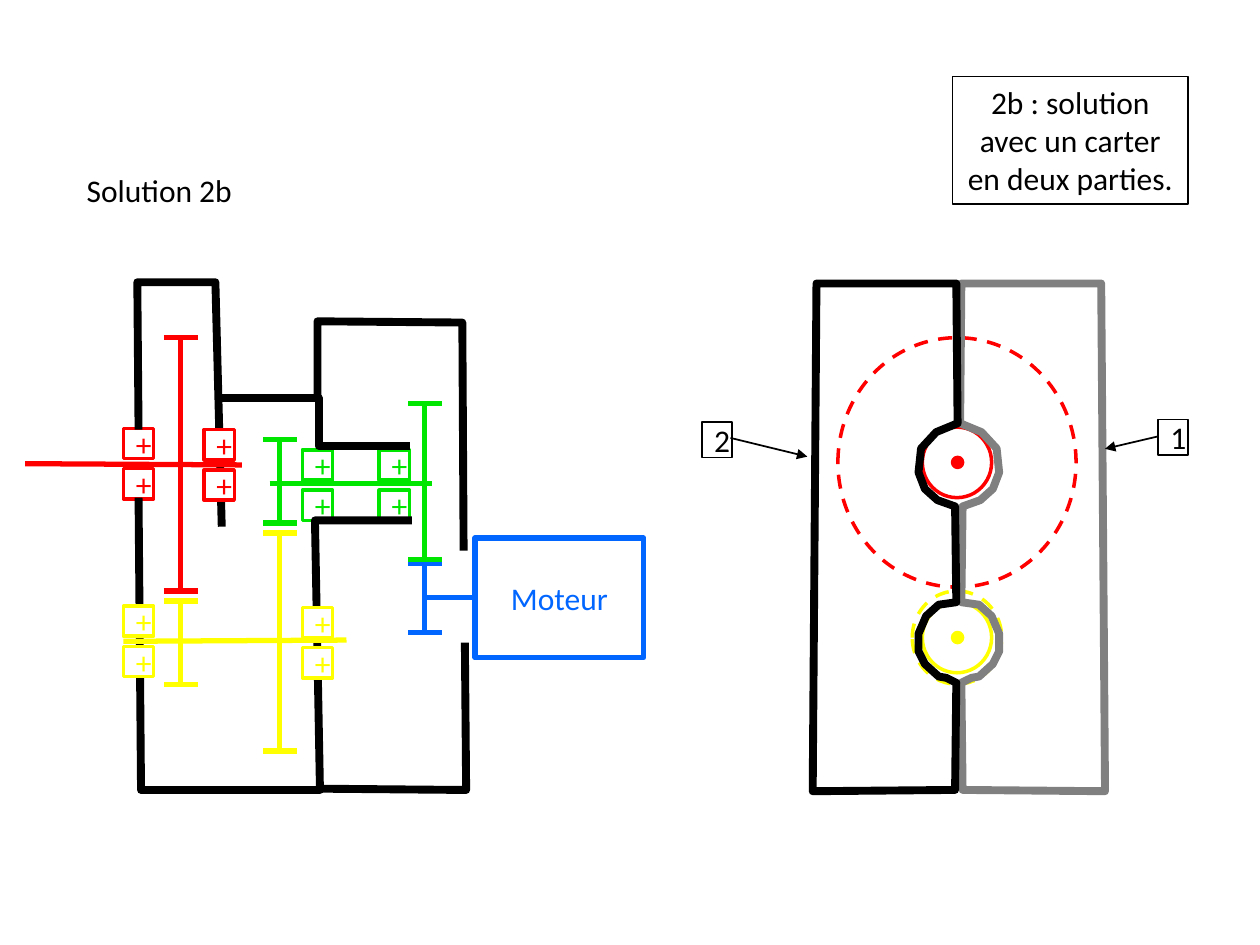
from pptx import Presentation
from pptx.dml.color import RGBColor
from pptx.enum.dml import MSO_LINE
from pptx.enum.shapes import MSO_CONNECTOR, MSO_SHAPE
from pptx.enum.text import MSO_ANCHOR, MSO_AUTO_SIZE, PP_ALIGN
from pptx.oxml.ns import qn
from pptx.util import Pt
from lxml.etree import SubElement

PX = 9144  # EMU per px, 100 px to the inch

BLACK = RGBColor(0x00, 0x00, 0x00)
WHITE = RGBColor(0xFF, 0xFF, 0xFF)
GRAY = RGBColor(0x80, 0x80, 0x80)
RED = RGBColor(0xFF, 0x00, 0x00)
GREEN = RGBColor(0x00, 0xE6, 0x00)
BLUE = RGBColor(0x00, 0x66, 0xFF)
YELLOW = RGBColor(0xFF, 0xFF, 0x00)


class Diagram:
    font = {"name": "Calibri", "size": Pt(18)}
    gear_width, casing_width, bearing_width = 3, 4.5, 2
    bearing_size, bearing_pitch = 24, 32
    section_x = 760

    def __init__(self, slide):
        self.shapes = slide.shapes

    def text(self, sp, text, color, align=PP_ALIGN.CENTER, **frame):
        tf = sp.text_frame
        for name, value in frame.items():
            setattr(tf, name, value)
        p = tf.paragraphs[0]
        p.alignment = align
        r = p.add_run()
        r.text = text
        for name, value in self.font.items():
            setattr(r.font, name, value)
        r.font.color.rgb = color

    def outline(self, sp, color, width, fill=None, dash=None):
        sp.shadow.inherit = False
        if fill is None:
            sp.fill.background()
        else:
            sp.fill.solid()
            sp.fill.fore_color.rgb = fill
        sp.line.color.rgb = color
        sp.line.width = Pt(width)
        if dash:
            sp.line.dash_style = dash

    def shape(self, kind, x, y, w, h, color, width, fill=None, dash=None):
        sp = self.shapes.add_shape(kind, x * PX, y * PX, w * PX, h * PX)
        self.outline(sp, color, width, fill, dash)
        return sp

    def box(self, x, y, w, h, text, color, width, fill=None, **frame):
        sp = self.shape(MSO_SHAPE.RECTANGLE, x, y, w, h, color, width, fill)
        self.text(sp, text, color, **frame)

    def label(self, x, y, w, h, text):
        sp = self.shapes.add_textbox(x * PX, y * PX, w * PX, h * PX)
        self.text(sp, text, BLACK, PP_ALIGN.LEFT, word_wrap=False,
                  auto_size=MSO_AUTO_SIZE.SHAPE_TO_FIT_TEXT)

    def callout(self, x, y, text, adjustments):
        sp = self.shape(MSO_SHAPE.LINE_CALLOUT_1, x, y, 24, 28, BLACK, 1, WHITE)
        for i, value in enumerate(adjustments):
            sp.adjustments[i] = value
        SubElement(sp.line._get_or_add_ln(), qn("a:tailEnd"), type="triangle")
        self.text(sp, text, BLACK, vertical_anchor=MSO_ANCHOR.MIDDLE)

    def line(self, x1, y1, x2, y2, color):
        cx = self.shapes.add_connector(
            MSO_CONNECTOR.STRAIGHT, x1 * PX, y1 * PX, x2 * PX, y2 * PX)
        cx.line.color.rgb = color
        cx.line.width = Pt(self.gear_width)
        SubElement(cx._element.spPr, qn("a:effectLst"))

    def gear(self, x, top, bottom, color):
        self.line(x, top, x, bottom, color)
        for y in (top, bottom):
            self.line(x - 13, y, x + 14, y, color)

    def bearing(self, x, y, color):
        for top in (y, y + self.bearing_pitch):
            self.box(x, top, self.bearing_size, self.bearing_size, "+", color,
                     self.bearing_width, WHITE, vertical_anchor=MSO_ANCHOR.MIDDLE)

    def casing(self, points, color=BLACK, close=False):
        fb = self.shapes.build_freeform(*points[0], scale=PX)
        fb.add_line_segments(points[1:], close=close)
        self.outline(fb.convert_to_shape(), color, self.casing_width)

    def section(self, y, w, h, color):
        rings = [(55, 56, WHITE, None), (8, 8, color, None),
                 (w, h, None, MSO_LINE.DASH)]
        for rw, rh, fill, dash in rings:
            self.shape(MSO_SHAPE.OVAL, self.section_x - (rw + 1) // 2,
                       y - rh // 2, rw, rh, color, 2, fill, dash)


def main():
    prs = Presentation()
    prs.slide_width, prs.slide_height = 1000 * PX, 750 * PX
    s = prs.slides.add_slide(prs.slide_layouts[6])
    d = Diagram(s)

    # Output wheel, motor pinion and green intermediate shaft
    d.gear(143, 268, 469, RED)
    d.gear(337, 447, 502, BLUE)
    d.line(337, 474, 432, 474, BLUE)
    d.line(214, 384, 343, 384, GREEN)
    d.gear(337, 320, 444, GREEN)
    d.gear(222, 349, 415, GREEN)
    d.box(377, 427, 134, 95, "Moteur", BLUE, 3, WHITE,
          vertical_anchor=MSO_ANCHOR.MIDDLE)

    # Bearings partly covered by the casing
    d.bearing(98, 340, RED)
    d.bearing(301, 357, GREEN)
    d.bearing(240, 357, GREEN)

    # Casing, front view
    for points in (
        [(110, 395), (112, 627), (254, 627), (250, 413), (327, 413)],
        [(110, 341), (109, 224), (171, 224), (176, 418)],
        [(325, 354), (253, 354), (253, 316), (176, 316)],
        [(252, 315), (252, 255), (367, 256), (368, 437)],
        [(369, 510), (370, 627), (254, 626)],
    ):
        d.casing(points)

    # Bearings and shafts in front of the casing
    d.bearing(240, 482, YELLOW)
    d.bearing(98, 481, YELLOW)
    d.bearing(162, 341, RED)
    d.line(20, 368, 192, 369, RED)
    d.gear(222, 423, 596, YELLOW)
    d.line(98, 509, 275, 508, YELLOW)
    d.gear(143, 477, 543, YELLOW)
    d.label(59, 131, 137, 40, "Solution 2b")

    # Side view: wheels between two mirrored casing halves
    d.section(367, 189, 198, RED)
    d.section(506, 71, 74, YELLOW)
    right_half = [
        (762, 336), (779, 343), (791, 356), (793, 375), (788, 388), (778, 397),
        (764, 402), (763, 478), (777, 480), (787, 489), (793, 503), (793, 517),
        (788, 527), (777, 537), (771, 538), (763, 542), (764, 627), (877, 628),
        (874, 225), (763, 225)]
    left_half = [(2 * 761 - x, y) for x, y in right_half]
    d.casing(right_half, GRAY, close=True)
    d.casing(left_half, BLACK, close=True)

    # Caption and part numbers
    d.box(756, 61, 187, 101, "2b : solution avec un carter en deux parties.",
          BLACK, 0.75, vertical_anchor=MSO_ANCHOR.TOP, word_wrap=True,
          auto_size=MSO_AUTO_SIZE.SHAPE_TO_FIT_TEXT)
    d.callout(919, 333, "1", (0.48, -0.01, 0.83, -1.75))
    d.callout(557, 335, "2", (0.45, 0.95, 0.98, 3.49))

    prs.save("out.pptx")


if __name__ == "__main__":
    main()
